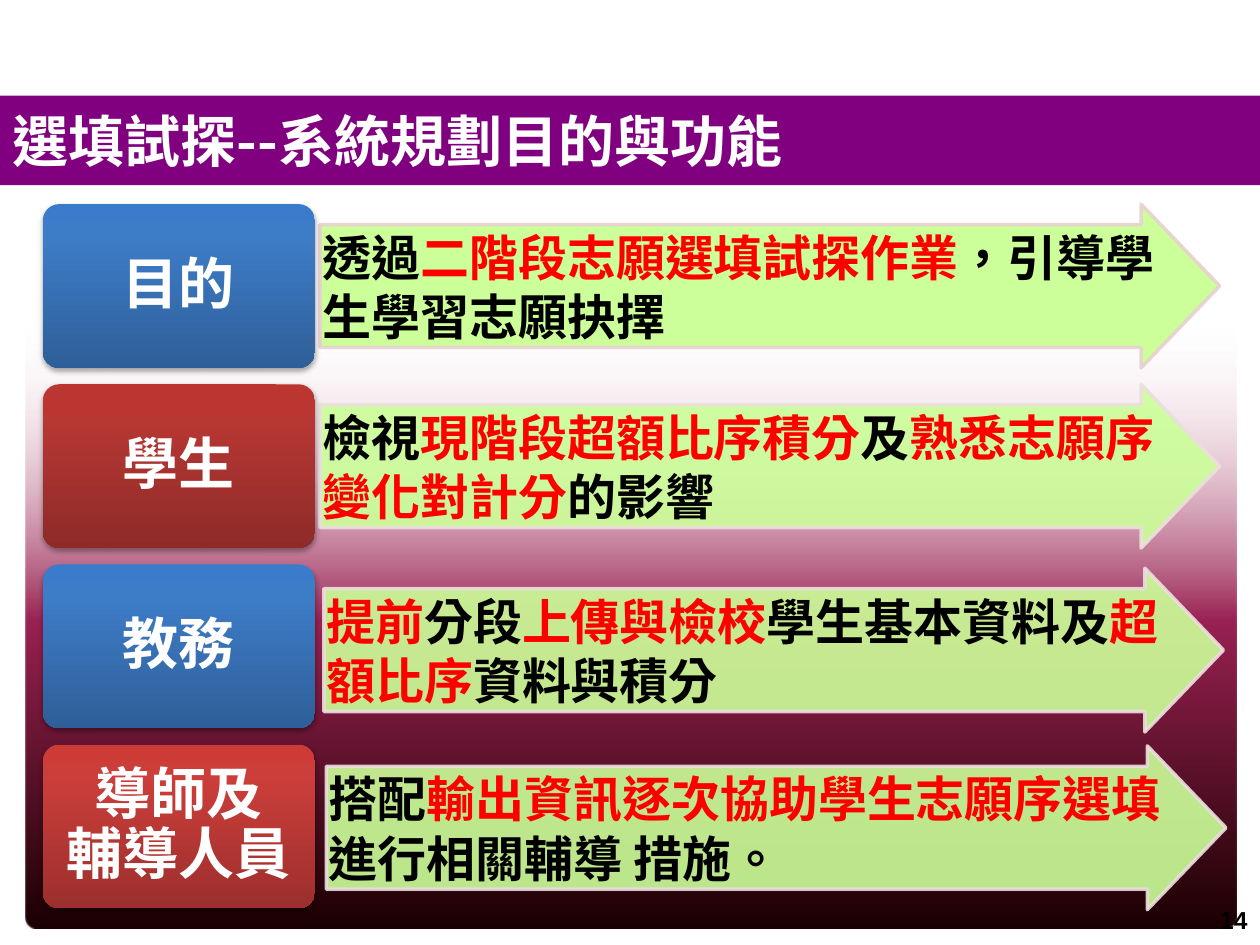
import pptx
import pptx.dml.color
import pptx.enum.shapes
import pptx.enum.text
import pptx.oxml
import pptx.oxml.ns
import pptx.util
from dataclasses import dataclass

Inches = pptx.util.Inches
Align = pptx.enum.text.PP_ALIGN
Shape = pptx.enum.shapes.MSO_SHAPE
NAMESPACE = 'xmlns:a="http://schemas.openxmlformats.org/drawingml/2006/main"'


@dataclass(frozen=True)
class Theme:
    font: str = "Noto Sans CJK SC"
    number_font: str = "Arial"
    title_size: int = 32
    label_size: int = 32
    body_size: int = 28
    body_pitch: float = 34
    number_size: int = 14
    white: str = "FFFFFF"
    text: str = "000000"
    accent: str = "FF0000"
    banner: str = "800080"
    arrow: str = "CCFF99"
    edge: str = "E8D0D0"
    pale_edge: str = "ECDEDE"
    # Gradient stops from top to bottom: position, colour, opacity
    backdrop: tuple = ((0, "FFFFFF", 0), (50, "992151", 100), (100, "1A0001", 100))
    blue: tuple = ((0, "3A7CCB", 100), (20, "3D7CC7", 100), (100, "2F5F99", 100))
    red: tuple = ((0, "BB3531", 100), (20, "B83734", 100), (100, "8E2B28", 100))
    bright_red: tuple = ((0, "CE3B37", 100), (20, "CB3E3A", 100), (100, "9C2F2D", 100))


THEME = Theme()

# Label lines, label gradient, arrow left and top, opacity, edge, text.
# Words between bars are emphasised.
ROWS = [
    (["目的"], THEME.blue, 2.54, 1.62, 100, THEME.edge,
     "透過|二階段志願選填試探作業|，引導學生學習志願抉擇"),
    (["學生"], THEME.red, 2.54, 3.05, 90, THEME.pale_edge,
     "檢視|現階段超額比序積分|及|熟悉志願序變化對計分|的影響"),
    (["教務"], THEME.blue, 2.57, 4.51, 90, THEME.pale_edge,
     "|提前|分段|上傳與檢校|學生基本資料及|超額比序|資料與積分"),
    (["導師及", "輔導人員"], THEME.bright_red, 2.59, 5.92, 90, THEME.pale_edge,
     "搭配|輸出資訊逐次協助學生志願序選填|進行相關輔導 措施。"),
]


def apply(target, values):
    for name, value in values.items():
        setattr(target, name, value)


def rgb(value):
    return pptx.dml.color.RGBColor.from_string(value)


def set_frame(shape, left=0.0, right=0.0):
    apply(shape.text_frame, {
        "word_wrap": True,
        "auto_size": pptx.enum.text.MSO_AUTO_SIZE.NONE,
        "vertical_anchor": pptx.enum.text.MSO_ANCHOR.MIDDLE,
        "margin_left": Inches(left), "margin_right": Inches(right),
        "margin_top": 0, "margin_bottom": 0,
    })
    return shape.text_frame


def add_span(para, text, size, color, font=THEME.font):
    span = para.add_run()
    span.text = text
    apply(span.font, {"name": font, "size": pptx.util.Pt(size), "bold": True})
    span.font.color.rgb = rgb(color)
    properties = span._r.get_or_add_rPr()
    properties.set("lang", "zh-TW")
    latin = properties.find(pptx.oxml.ns.qn("a:latin"))
    latin.addnext(pptx.oxml.parse_xml(f'<a:ea {NAMESPACE} typeface="{font}"/>'))


def add_shape(page, kind, box):
    shape = page.shapes.add_shape(kind, *map(Inches, box))
    shape.shadow.inherit = False
    shape.line.fill.background()
    return shape


def set_opacity(fill, percent):
    color = fill._xPr.find(".//" + pptx.oxml.ns.qn("a:srgbClr"))
    color.append(pptx.oxml.parse_xml(f'<a:alpha {NAMESPACE} val="{percent * 1000}"/>'))


def set_gradient(shape, stops):
    marks = "".join(
        f'<a:gs pos="{place * 1000}"><a:srgbClr val="{color}">'
        f'<a:alpha val="{opacity * 1000}"/></a:srgbClr></a:gs>'
        for place, color, opacity in stops)
    gradient = pptx.oxml.parse_xml(
        f'<a:gradFill {NAMESPACE} rotWithShape="1"><a:gsLst>{marks}</a:gsLst>'
        '<a:lin ang="5400000" scaled="0"/></a:gradFill>')
    shape._element.spPr.find(pptx.oxml.ns.qn("a:prstGeom")).addnext(gradient)


def add_soft_shadow(shape):
    effects = shape._element.spPr.find(pptx.oxml.ns.qn("a:effectLst"))
    effects.append(pptx.oxml.parse_xml(
        f'<a:outerShdw {NAMESPACE} blurRad="{pptx.util.Pt(3.1)}" '
        f'dist="{pptx.util.Pt(1.8)}" dir="5400000" rotWithShape="0">'
        '<a:srgbClr val="000000"><a:alpha val="35000"/></a:srgbClr></a:outerShdw>'))


def add_backdrop(page, box):
    shape = add_shape(page, Shape.ROUNDED_RECTANGLE, box)
    shape.adjustments[0] = 0.02
    set_gradient(shape, THEME.backdrop)


def add_title(page, box):
    title = page.shapes.title
    apply(title, dict(zip(("left", "top", "width", "height"), map(Inches, box))))
    title.fill.solid()
    title.fill.fore_color.rgb = rgb(THEME.banner)
    para = set_frame(title, 0.1, 0.1).paragraphs[0]
    para.alignment = Align.LEFT
    add_span(para, "選填試探--系統規劃目的與功能", THEME.title_size, THEME.white)


def add_label(page, box, lines, stops):
    shape = add_shape(page, Shape.ROUNDED_RECTANGLE, box)
    shape.adjustments[0] = 0.1
    set_gradient(shape, stops)
    add_soft_shadow(shape)
    frame = set_frame(shape)
    for index, line in enumerate(lines):
        para = frame.paragraphs[0] if index == 0 else frame.add_paragraph()
        apply(para, {"alignment": Align.CENTER, "line_spacing": 0.9})
        add_span(para, line, THEME.label_size, THEME.white)


def add_arrow(page, box, text, opacity, edge):
    shape = add_shape(page, Shape.RIGHT_ARROW, box)
    shape.adjustments[0] = 0.75
    shape.adjustments[1] = 0.48
    shape.fill.solid()
    shape.fill.fore_color.rgb = rgb(THEME.arrow)
    set_opacity(shape.fill, opacity)
    shape.line.width = pptx.util.Pt(2)
    shape.line.color.rgb = rgb(edge)
    set_opacity(shape.line.fill, 90)
    para = set_frame(shape, left=0.02).paragraphs[0]
    apply(para, {"alignment": Align.LEFT,
                 "line_spacing": pptx.util.Pt(THEME.body_pitch)})
    for index, part in enumerate(text.split("|")):
        if part:
            add_span(para, part, THEME.body_size,
                     THEME.accent if index % 2 else THEME.text)


def add_number(page, box):
    shape = page.shapes.add_textbox(*map(Inches, box))
    para = set_frame(shape, 0.1, 0.1).paragraphs[0]
    para.alignment = Align.RIGHT
    add_span(para, "14", THEME.number_size, THEME.text, THEME.number_font)


def main():
    deck = pptx.Presentation()
    deck.slide_width, deck.slide_height = Inches(10), Inches(7.5)
    page = deck.slides.add_slide(deck.slide_layouts[5])

    add_backdrop(page, (0.2, 2.5, 9.61, 4.87))
    add_title(page, (0, 0.76, 10, 0.71))
    for index, (lines, stops, left, top, opacity, edge, text) in enumerate(ROWS):
        add_arrow(page, (left, top, 7.14, 1.3), text, opacity, edge)
        add_label(page, (0.34, 1.62 + 1.43 * index, 2.16, 1.3), lines, stops)
    add_number(page, (7.67, 7.1, 2.33, 0.4))
    deck.save("out.pptx")


if __name__ == "__main__":
    main()
